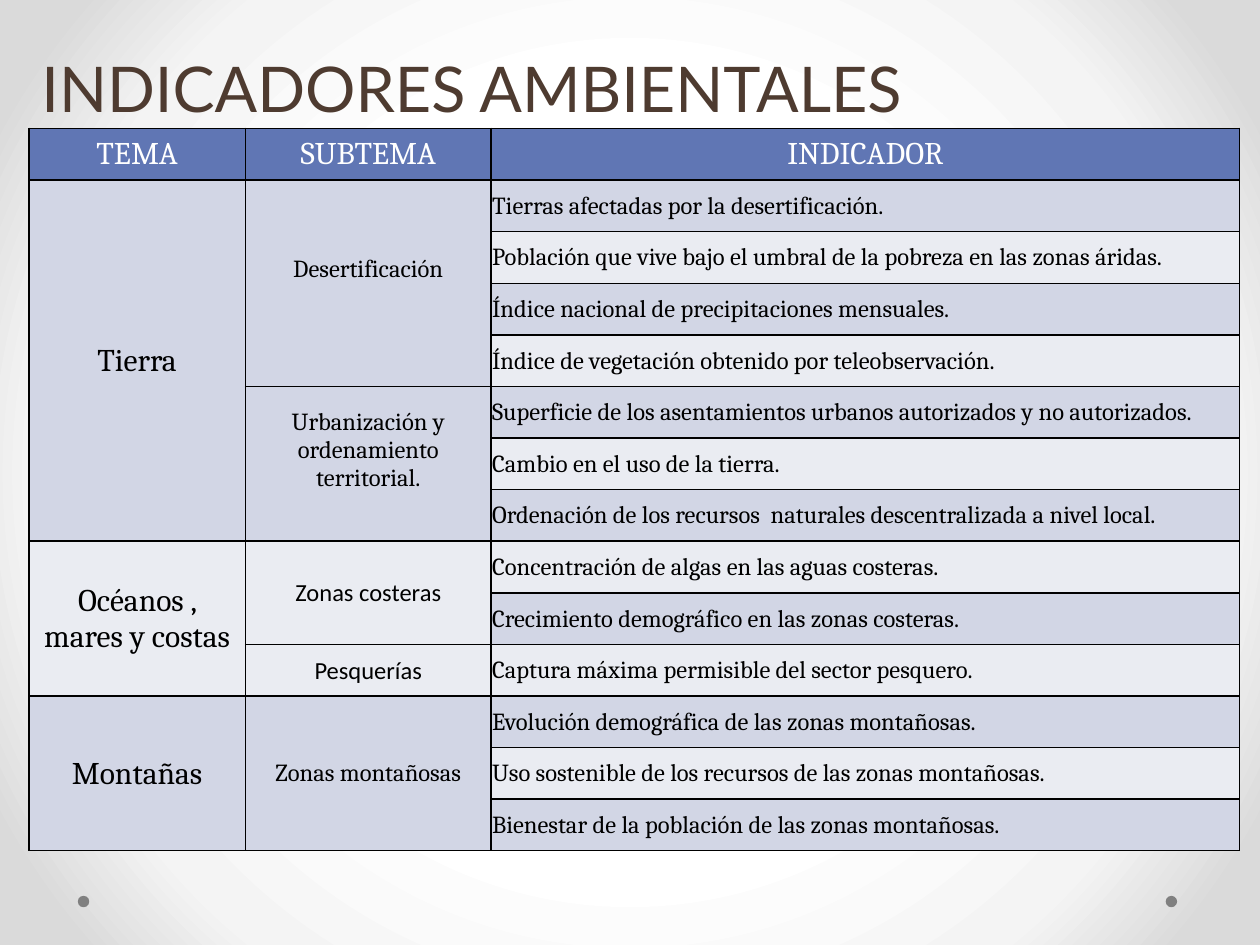
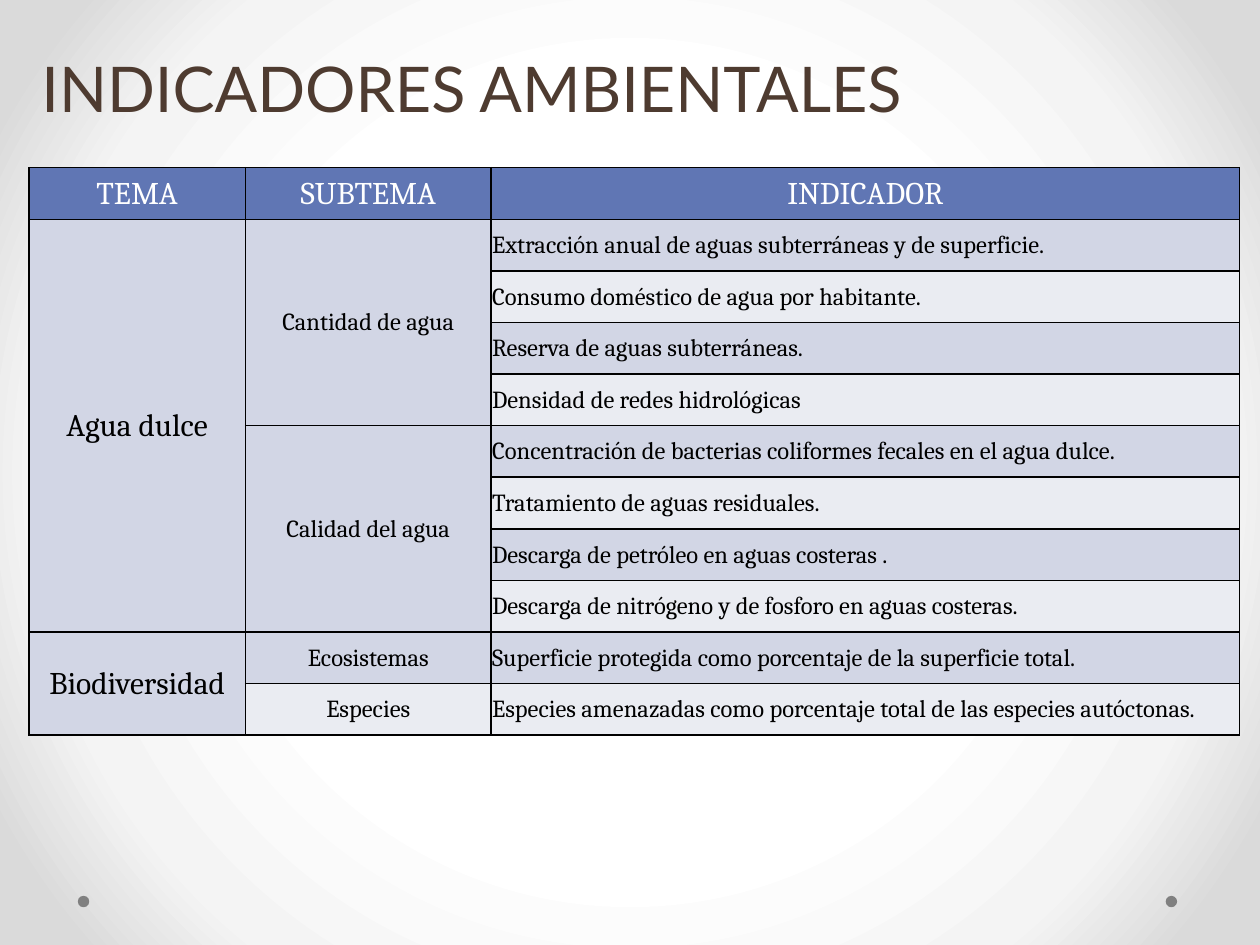
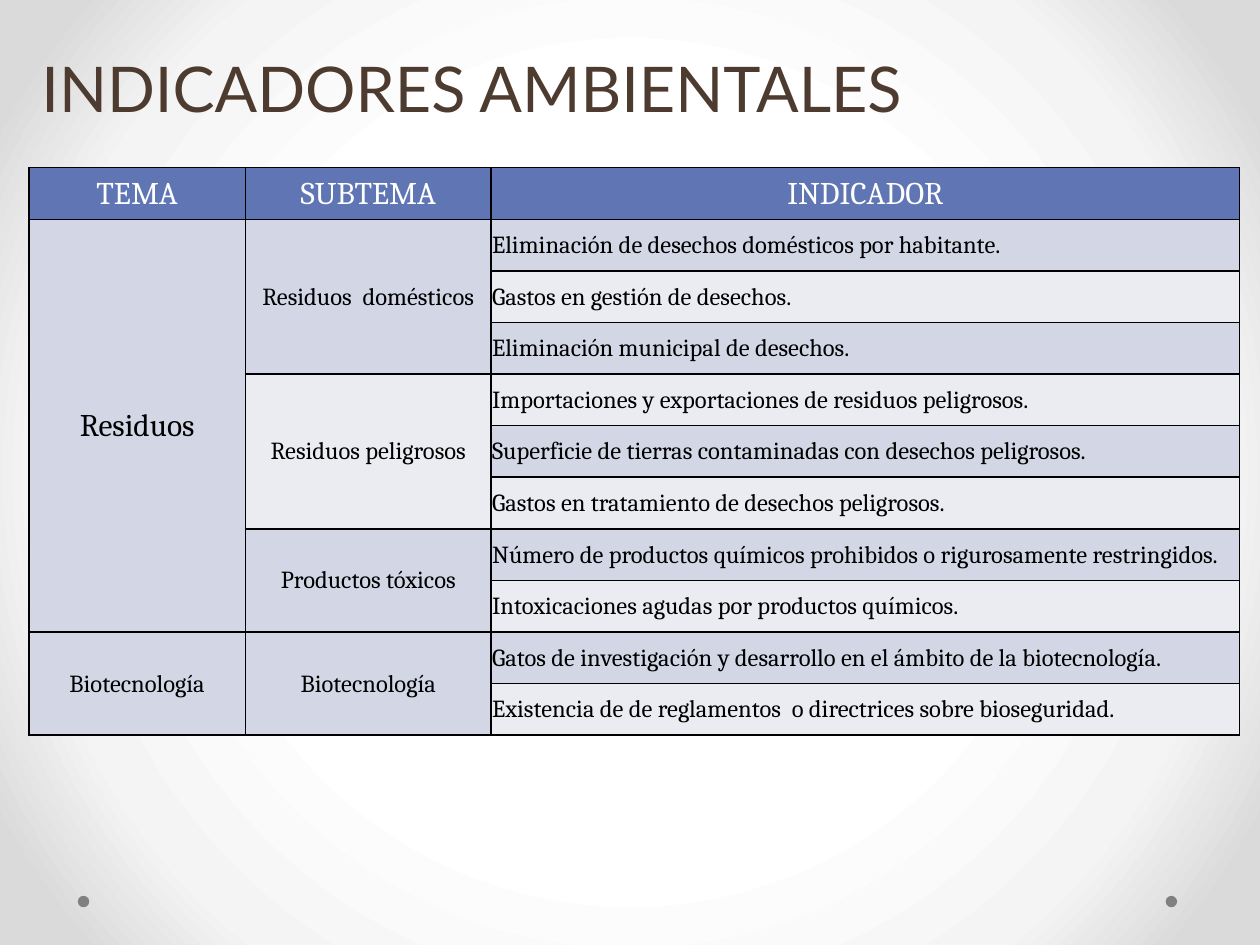
from pptx import Presentation
from pptx import oxml, util as u
from pptx.dml.color import RGBColor
from pptx.enum import shapes, text
from pptx.oxml.ns import nsdecls, qn

# Colours and fonts
BROWN = RGBColor(0x4E, 0x3B, 0x30)
BLUE = RGBColor(0x60, 0x76, 0xB4)
DARK_BAND = RGBColor(0xD2, 0xD6, 0xE5)
LIGHT_BAND = RGBColor(0xEA, 0xEC, 0xF2)
GRAY = RGBColor(0x80, 0x80, 0x80)
BLACK = RGBColor(0, 0, 0)
WHITE = RGBColor(0xFF, 0xFF, 0xFF)
BACKGROUND_STOPS = [(50, WHITE), (76, RGBColor(0xF4, 0xF4, 0xF4)),
                    (92, RGBColor(0xDA, 0xDA, 0xDA))]
SERIF, SANS, TITLE_FONT = "Cambria", "Calibri", "Lato"

# Table geometry
TABLE_LEFT = u.Cm(0.58)
COLUMN_WIDTHS = [u.Cm(4.37), u.Cm(4.95), u.Cm(15.09)]
ROW_HEIGHT = u.Cm(1.04)
HEADINGS = ["TEMA", "SUBTEMA", "INDICADOR"]
TIGHT_MARGINS = {"margin_left": u.Cm(0.02), "margin_right": u.Cm(0.02),
                 "margin_top": u.Cm(0.02), "margin_bottom": 0}

# Formats that differ from those of the column
SANS_SUBTHEMES = {"Zonas costeras", "Pesquerías"}
RAISED_SUBTHEMES = {"Desertificación", "Urbanización y ordenamiento territorial."}
SMALL_THEMES = {"Biotecnología"}

# Table top and its themes, subthemes and indicators
TABLES = [
    (u.Cm(2.59), {
        "Tierra": {
            "Desertificación": [
                "Tierras afectadas por la desertificación.",
                "Población que vive bajo el umbral de la pobreza en las zonas áridas.",
                "Índice nacional de precipitaciones mensuales.",
                "Índice de vegetación obtenido por teleobservación."],
            "Urbanización y ordenamiento territorial.": [
                "Superficie de los asentamientos urbanos autorizados y no autorizados.",
                "Cambio en el uso de la tierra.",
                "Ordenación de los recursos  naturales descentralizada a nivel local."]},
        "Océanos , mares y costas": {
            "Zonas costeras": [
                "Concentración de algas en las aguas costeras.",
                "Crecimiento demográfico en las zonas costeras."],
            "Pesquerías": [
                "Captura máxima permisible del sector pesquero."]},
        "Montañas": {
            "Zonas montañosas": [
                "Evolución demográfica de las zonas montañosas.",
                "Uso sostenible de los recursos de las zonas montañosas.",
                "Bienestar de la población de las zonas montañosas."]}}),
    (u.Cm(3.38), {
        "Agua dulce": {
            "Cantidad de agua": [
                "Extracción anual de aguas subterráneas y de superficie.",
                "Consumo doméstico de agua por habitante.",
                "Reserva de aguas subterráneas.",
                "Densidad de redes hidrológicas"],
            "Calidad del agua": [
                "Concentración de bacterias coliformes fecales en el agua dulce.",
                "Tratamiento de aguas residuales.",
                "Descarga de petróleo en aguas costeras .",
                "Descarga de nitrógeno y de fosforo en aguas costeras."]},
        "Biodiversidad": {
            "Ecosistemas": [
                "Superficie protegida como porcentaje de la superficie total."],
            "Especies": [
                "Especies amenazadas como porcentaje total de las especies autóctonas."]}}),
    (u.Cm(3.38), {
        "Residuos": {
            "Residuos  domésticos": [
                "Eliminación de desechos domésticos por habitante.",
                "Gastos en gestión de desechos.",
                "Eliminación municipal de desechos."],
            "Residuos peligrosos": [
                "Importaciones y exportaciones de residuos peligrosos.",
                "Superficie de tierras contaminadas con desechos peligrosos.",
                "Gastos en tratamiento de desechos peligrosos."],
            "Productos tóxicos": [
                "Número de productos químicos prohibidos o rigurosamente restringidos.",
                "Intoxicaciones agudas por productos químicos."]},
        "Biotecnología": {
            "Biotecnología": [
                "Gatos de investigación y desarrollo en el ámbito de la biotecnología.",
                "Existencia de de reglamentos  o directrices sobre bioseguridad."]}}),
]


def write_text(frame, words, color, alignment, **font_format):
    frame.text = words
    paragraph = frame.paragraphs[0]
    paragraph.alignment = alignment
    font = paragraph.runs[0].font
    font.color.rgb = color
    for name, value in font_format.items():
        setattr(font, name, value)


def style_cell(cell, fill_color, margins):
    cell.fill.solid()
    cell.fill.fore_color.rgb = fill_color
    cell.vertical_anchor = text.MSO_ANCHOR.MIDDLE
    for name, value in margins.items():
        setattr(cell, name, value)
    properties = cell._tc.get_or_add_tcPr()
    for index, side in enumerate("LRTB"):
        properties.insert(index, oxml.parse_xml(
            f'<a:ln{side} {nsdecls("a")} w="{u.Pt(1)}"><a:solidFill>'
            f'<a:srgbClr val="{BLACK}"/></a:solidFill></a:ln{side}>'))


presentation = Presentation()
presentation.slide_width, presentation.slide_height = u.Cm(25.4), u.Cm(19.05)
master = presentation.slide_master
layout = presentation.slide_layouts.get_by_name("Title Only")

# Shared background
master.background.fill.gradient()
gradient = master.element.find(".//" + qn("a:gradFill"))
stops = "".join(f'<a:gs pos="{position * 1000}"><a:srgbClr val="{color}"/></a:gs>'
                for position, color in BACKGROUND_STOPS)
gradient.getparent().replace(gradient, oxml.parse_xml(
    f'<a:gradFill {nsdecls("a")} rotWithShape="1"><a:gsLst>{stops}</a:gsLst>'
    '<a:path path="circle"><a:fillToRect l="50000" t="50000" r="50000" b="50000"/>'
    '</a:path></a:gradFill>'))

# Shared title position
title_box = {"left": u.Cm(0.58), "top": u.Cm(0.58),
             "width": u.Cm(24.13), "height": u.Cm(2.34)}
for name, value in title_box.items():
    setattr(layout.placeholders[0], name, value)

for table_top, themes in TABLES:
    slide = presentation.slides.add_slide(layout)
    write_text(slide.shapes.title.text_frame, "INDICADORES AMBIENTALES", BROWN,
               text.PP_ALIGN.LEFT, name=TITLE_FONT, size=u.Pt(36))

    # Empty banded grid with its heading row
    row_count = 1 + sum(len(indicators) for subthemes in themes.values()
                        for indicators in subthemes.values())
    table = slide.shapes.add_table(row_count, len(HEADINGS), TABLE_LEFT, table_top,
                                   sum(COLUMN_WIDTHS), ROW_HEIGHT * row_count).table
    table.first_row = table.horz_banding = False
    for column, width in zip(table.columns, COLUMN_WIDTHS):
        column.width = width
    for row_index, row in enumerate(table.rows):
        row.height = ROW_HEIGHT
        band = BLUE if row_index == 0 else DARK_BAND if row_index % 2 else LIGHT_BAND
        for cell in row.cells:
            style_cell(cell, band, TIGHT_MARGINS)
    for column_index, heading in enumerate(HEADINGS):
        write_text(table.cell(0, column_index).text_frame, heading, WHITE,
                   text.PP_ALIGN.CENTER, name=SERIF, size=u.Pt(18))

    # Themes and subthemes span the rows of their indicators
    row_index = 1
    for theme, subthemes in themes.items():
        theme_row = row_index
        for subtheme, indicators in subthemes.items():
            subtheme_cell = table.cell(row_index, 1)
            write_text(subtheme_cell.text_frame, subtheme, BLACK, text.PP_ALIGN.CENTER,
                       name=SANS if subtheme in SANS_SUBTHEMES else SERIF, size=u.Pt(14))
            if subtheme in RAISED_SUBTHEMES:
                subtheme_cell.margin_bottom = u.Cm(0.57)
            if len(indicators) > 1:
                subtheme_cell.merge(table.cell(row_index + len(indicators) - 1, 1))
            for indicator in indicators:
                write_text(table.cell(row_index, 2).text_frame, indicator, BLACK,
                           text.PP_ALIGN.LEFT, name=SERIF, size=u.Pt(14))
                row_index += 1
        theme_cell = table.cell(theme_row, 0)
        small = theme in SMALL_THEMES
        write_text(theme_cell.text_frame, theme, BLACK, text.PP_ALIGN.CENTER,
                   name=SERIF, size=u.Pt(14 if small else 18))
        if not small:
            theme_cell.margin_left = theme_cell.margin_right = u.Cm(0.25)
        theme_cell.merge(table.cell(row_index - 1, 0))

# Footer dots, moved to the master so that every slide shows them
for dot_left in (u.Cm(23.5), u.Cm(1.57)):
    dot = slide.shapes.add_shape(shapes.MSO_SHAPE.OVAL, dot_left, u.Cm(18.06),
                                 u.Cm(0.23), u.Cm(0.23))
    dot.shadow.inherit = False
    dot.fill.solid()
    dot.fill.fore_color.rgb = GRAY
    dot.line.fill.background()
    dot.element.nvSpPr.cNvPr.set("id", str(100 + len(master.shapes)))
    master.shapes.element.append(dot.element)

presentation.save("out.pptx")
